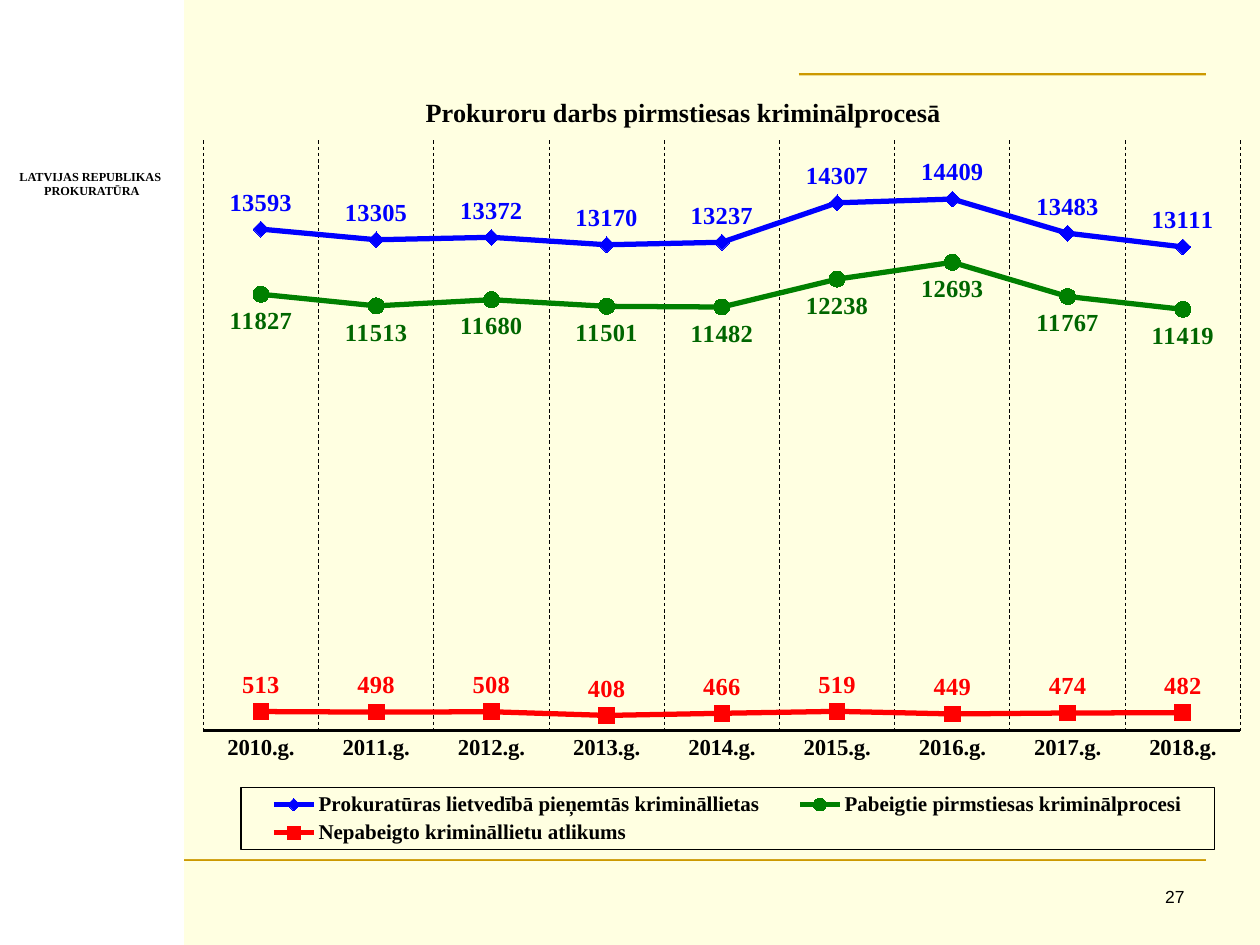
from lxml.etree import SubElement
from pptx import Presentation
from pptx.chart.data import CategoryChartData
from pptx.dml.color import RGBColor
from pptx.enum.chart import (XL_CHART_TYPE, XL_LABEL_POSITION, XL_LEGEND_POSITION,
                             XL_MARKER_STYLE, XL_TICK_MARK)
from pptx.enum.dml import MSO_LINE
from pptx.enum.shapes import MSO_CONNECTOR, MSO_SHAPE
from pptx.enum.text import MSO_AUTO_SIZE, PP_ALIGN
from pptx.oxml import parse_xml
from pptx.oxml.ns import nsdecls, qn
from pptx.util import Cm, Pt


class Theme:
    serif, sans = "Times New Roman", "Arial"
    cream, white, black, gold = "FFFFE1", "FFFFFF", "000000", "CC9900"
    blue, green, dark_green, red = "0000FF", "008000", "006600", "FF0000"
    yellow, amber = "FFFF00", "FFC000"
    logo_size, base_size, legend_size, axis_size, label_size, title_size = 7, 10, 12, 13, 14, 15


def rgb(color):
    return RGBColor.from_string(color)


def set_font(font, size, color=Theme.black, name=Theme.serif, bold=True):
    font.name, font.size, font.bold = name, Pt(size), bold
    font.color.rgb = rgb(color)


def set_layout(parent, index, **values):
    """Give a chart part a manual layout, as fractions of the chart."""
    for old in parent.findall(qn("c:layout")):
        parent.remove(old)
    layout = parse_xml(f"<c:layout {nsdecls('c')}><c:manualLayout/></c:layout>")
    for tag, value in values.items():
        SubElement(layout[0], qn(f"c:{tag}")).set("val", str(value))
    parent.insert(index, layout)


def area_format(fill="<a:noFill/>", line="<a:noFill/>"):
    return parse_xml(f"<c:spPr {nsdecls('c', 'a')}>{fill}<a:ln w=\"9525\">{line}</a:ln></c:spPr>")


def solid(color):
    return f'<a:solidFill><a:srgbClr val="{color}"/></a:solidFill>'


class Builder:
    def __init__(self, prs):
        self.t = Theme
        self.s = prs.slides.add_slide(prs.slide_layouts[6])
        fill = self.s.background.fill
        fill.solid()
        fill.fore_color.rgb = rgb(self.t.cream)

    def panel(self, x, y, w, h, color):
        sp = self.s.shapes.add_shape(MSO_SHAPE.RECTANGLE, Cm(x), Cm(y), Cm(w), Cm(h))
        sp.shadow.inherit = False
        sp.fill.solid()
        sp.fill.fore_color.rgb = rgb(color)
        sp.line.fill.background()

    def rule(self, x1, x2, y):
        ln = self.s.shapes.add_connector(MSO_CONNECTOR.STRAIGHT, Cm(x1), Cm(y), Cm(x2), Cm(y))
        ln.line.color.rgb = rgb(self.t.gold)
        ln.line.width = Pt(2.25)
        SubElement(ln._element.spPr, qn("a:effectLst"))

    def text(self, x, y, w, h, lines, align, size, name, bold=False, wrap=True):
        tf = self.s.shapes.add_textbox(Cm(x), Cm(y), Cm(w), Cm(h)).text_frame
        tf.word_wrap = wrap
        if not wrap:
            tf.auto_size = MSO_AUTO_SIZE.SHAPE_TO_FIT_TEXT
        tf.text = "\n".join(lines)
        for p in tf.paragraphs:
            p.alignment = align
            set_font(p.font, size, name=name, bold=bold)

    def line_chart(self, x, y, w, h, title, cats, series):
        t = self.t
        data = CategoryChartData()
        data.categories = cats
        for name, values, *_ in series:
            data.add_series(name, values)
        chart = self.s.shapes.add_chart(XL_CHART_TYPE.LINE_MARKERS, Cm(x), Cm(y),
                                        Cm(w), Cm(h), data).chart
        set_font(chart.font, t.base_size, bold=False)
        space = chart._chartSpace
        space.chart.addnext(area_format(fill=solid(t.cream)))
        set_layout(space.chart.plotArea, 0, layoutTarget="inner", xMode="edge", yMode="edge",
                   x=0.018, y=0.083, w=0.964, h=0.753)

        # Title
        chart.has_title = True
        tf = chart.chart_title.text_frame
        tf.text = title
        set_font(tf.paragraphs[0].font, t.title_size)
        set_layout(chart.chart_title._element, 1, xMode="edge", yMode="edge", x=0.22, y=0.02)

        # Legend
        chart.has_legend = True
        legend = chart.legend
        legend.position = XL_LEGEND_POSITION.BOTTOM
        legend.include_in_layout = False
        set_layout(legend._element, 1, xMode="edge", yMode="edge",
                   x=0.053, y=0.909, w=0.905, h=0.079)
        legend._element.find(qn("c:overlay")).addnext(area_format(line=solid(t.black)))
        set_font(legend.font, t.legend_size)

        # Axes
        val = chart.value_axis
        val.minimum_scale, val.maximum_scale = 0, 16000
        val.has_major_gridlines = False
        val.visible = False
        cat = chart.category_axis
        cat.major_tick_mark = XL_TICK_MARK.NONE
        set_font(cat.tick_labels.font, t.axis_size)
        cat.format.line.color.rgb = rgb(t.black)
        cat.format.line.width = Pt(1.5)
        cat.has_major_gridlines = True
        grid = cat.major_gridlines.format.line
        grid.color.rgb = rgb(t.black)
        grid.width = Pt(0.5)
        grid.dash_style = MSO_LINE.DASH

        # Series
        plot = chart.plots[0]
        plot.vary_by_categories = False
        for ser, (_, _, color, marker, marker_fill, label_color, pos) in zip(plot.series, series):
            ser.smooth = False
            ser.format.line.color.rgb = rgb(color)
            ser.format.line.width = Pt(3)
            ser.marker.style, ser.marker.size = marker, 9
            ser.marker.format.fill.solid()
            ser.marker.format.fill.fore_color.rgb = rgb(marker_fill)
            ser.marker.format.line.color.rgb = rgb(color)
            labels = ser.data_labels
            labels.show_value = True
            labels.position = pos
            set_font(labels.font, t.label_size, label_color)


def main():
    prs = Presentation()
    prs.slide_width, prs.slide_height = Cm(25.4), Cm(19.05)
    b, t = Builder(prs), Theme

    # Frame
    b.panel(0, 0, 3.71, 19.05, t.white)
    b.rule(3.71, 24.31, 17.32)
    b.rule(16.1, 24.31, 1.52)
    b.text(0.13, 3.28, 3.38, 0.84, ["LATVIJAS REPUBLIKAS", " PROKURATŪRA"],
           PP_ALIGN.CENTER, t.logo_size, t.serif, bold=True, wrap=False)
    b.text(18.85, 17.73, 5.28, 0.89, ["27"], PP_ALIGN.RIGHT, t.base_size, t.sans)

    # Chart
    above, below = XL_LABEL_POSITION.ABOVE, XL_LABEL_POSITION.BELOW
    series = [
        ("Prokuratūras lietvedībā pieņemtās krimināllietas",
         [13593, 13305, 13372, 13170, 13237, 14307, 14409, 13483, 13111],
         t.blue, XL_MARKER_STYLE.DIAMOND, t.yellow, t.blue, above),
        ("Pabeigtie pirmstiesas kriminālprocesi",
         [11827, 11513, 11680, 11501, 11482, 12238, 12693, 11767, 11419],
         t.green, XL_MARKER_STYLE.CIRCLE, t.yellow, t.dark_green, below),
        ("Nepabeigto krimināllietu atlikums",
         [513, 498, 508, 408, 466, 519, 449, 474, 482],
         t.red, XL_MARKER_STYLE.SQUARE, t.amber, t.red, above),
    ]
    b.line_chart(3.71, 1.52, 21.69, 15.8, "Prokuroru darbs pirmstiesas kriminālprocesā",
                 [f"{year}.g." for year in range(2010, 2019)], series)

    prs.save("out.pptx")


if __name__ == "__main__":
    main()
